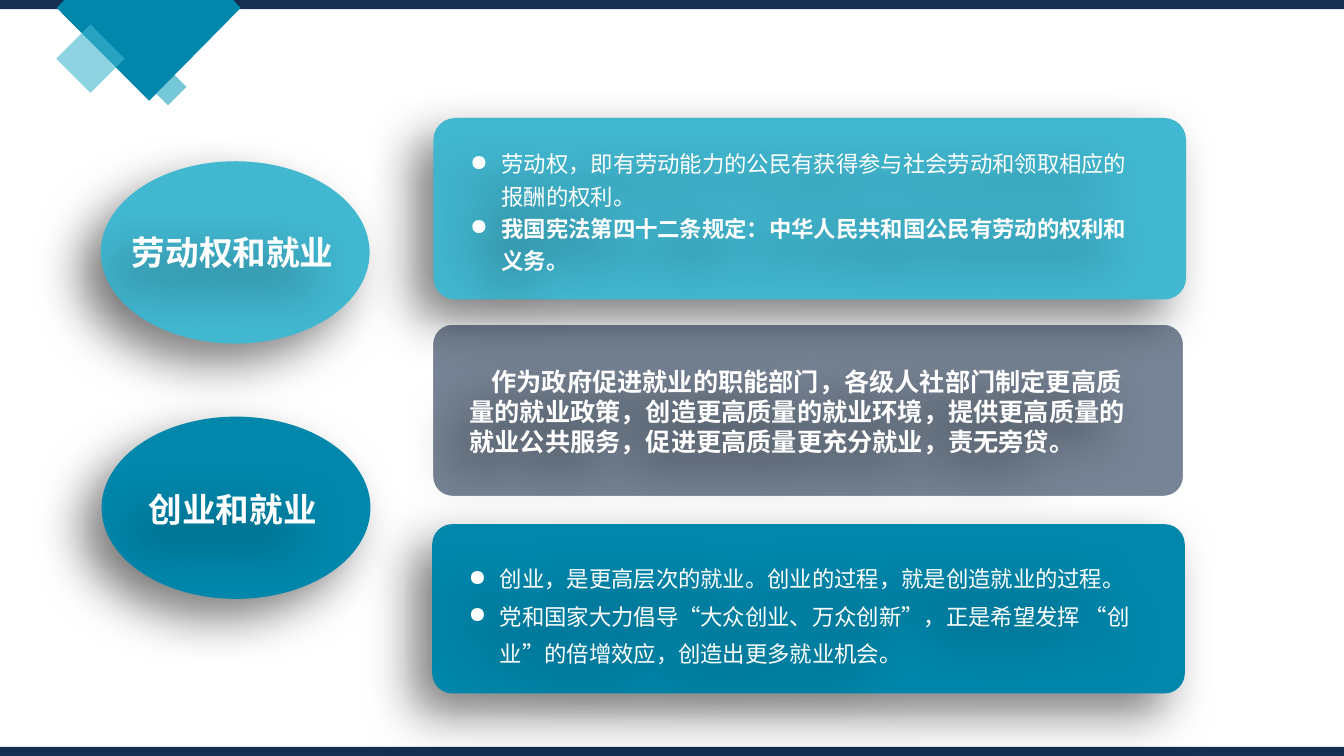
from lxml import etree
from pptx import Presentation
from pptx import util as u
from pptx.dml.color import RGBColor
from pptx.enum import shapes, text
from pptx.oxml import ns

HUES = {"navy": "152E52", "teal": "0187AC", "sky": "41B7D0", "aqua": "1AA4BE",
        "slate": "778495", "edge": "FEFFFF", "white": "FFFFFF", "black": "000000"}
COLS, ROWS = 160, 90
KIND = shapes.MSO_SHAPE


def add(node, tag, **attrs):
    return etree.SubElement(node, ns.qn(tag), attrs)


class Deck:
    def __init__(self):
        self.prs = Presentation()
        self.prs.slide_width, self.prs.slide_height = u.Inches(13.333), u.Inches(7.5)
        self.slide = self.prs.slides.add_slide(self.prs.slide_layouts[6])
        self.font = "Noto Sans CJK SC"

    def col(self, n):
        return round(self.prs.slide_width * n / COLS)

    def row(self, n):
        return round(self.prs.slide_height * n / ROWS)

    def box(self, x, y, w, h):
        return self.col(x), self.row(y), self.col(w), self.row(h)

    def tint(self, fmt, hue):
        fmt.color.rgb = RGBColor.from_string(HUES[hue])

    def paint(self, shape, hue, alpha=None):
        shape.shadow.inherit = False
        shape.fill.solid()
        shape.fill.fore_color.rgb = RGBColor.from_string(HUES[hue])
        shape.line.fill.background()
        if alpha:
            fill = shape.fill._xPr.find(ns.qn("a:solidFill"))
            add(fill[0], "a:alpha", val=str(alpha * 1000))
        return shape

    def shape(self, kind, area, hue, alpha=None):
        item = self.slide.shapes.add_shape(kind, *self.box(*area))
        return self.paint(item, hue, alpha)

    def poly(self, points, hue):
        dots = [(self.col(x), self.row(y)) for x, y in points]
        form = self.slide.shapes.build_freeform(*dots[0], scale=1.0)
        form.add_line_segments(dots[1:], close=True)
        return self.paint(form.convert_to_shape(), hue)

    def shade(self, shape):
        """Cast a soft shadow down and to the left."""
        shape.shadow.inherit = False
        glow = add(shape._element.spPr.find(ns.qn("a:effectLst")), "a:outerShdw",
                   blurRad=str(u.Pt(35)), dist=str(u.Pt(20)),
                   dir=str(135 * 60000), algn="tr", rotWithShape="0")
        add(add(glow, "a:srgbClr", val=HUES["black"]), "a:alpha", val="50000")

    def card(self, area, hue):
        item = self.shape(KIND.ROUNDED_RECTANGLE, area, hue)
        item.adjustments[0] = 0.119
        return item

    def words(self, area, lines, size, bold=(), space=None, first=0,
              dots=False, align=text.PP_ALIGN.LEFT):
        item = self.slide.shapes.add_textbox(*self.box(*area))
        self.shade(item)
        frame = item.text_frame
        frame.word_wrap = True
        frame.vertical_anchor = text.MSO_ANCHOR.MIDDLE
        frame.text = "\n".join(lines)
        for i, para in enumerate(frame.paragraphs):
            para.alignment = align
            if space:
                para.line_spacing = space
            props = para._p.get_or_add_pPr()
            if first:
                props.set("indent", str(u.Inches(first)))
            if dots:
                props.set("marL", str(u.Inches(0.31)))
                props.set("indent", str(u.Inches(-0.31)))
                add(props, "a:buChar", char="●")
            for run in para.runs:
                run.font.size, run.font.bold = u.Pt(size), i in bold
                run.font.name = self.font
                self.tint(run.font, "white")
                add(run.font._element, "a:ea", typeface=self.font)

    def oval(self, area, hue, label, span):
        self.shade(self.shape(KIND.OVAL, area, hue))
        self.words(span, [label], 24, bold=(0,), align=text.PP_ALIGN.CENTER)


def main():
    deck = Deck()
    deck.shape(KIND.DIAMOND, (17.8, 8.15, 4.4, 4.4), "aqua", 60)
    deck.shape(KIND.RECTANGLE, (0, 0, COLS, 1.1), "navy")
    deck.poly([(7.65, 0), (27.75, 0), (28.65, 0.95), (17.75, 12), (6.75, 0.95)], "teal")
    deck.shape(KIND.DIAMOND, (6.7, 2.9, 8.15, 8.15), "sky", 60)
    deck.shape(KIND.RECTANGLE, (0, ROWS - 1.1, COLS, 1.1), "navy")

    duty = deck.card((51.4, 38.5, 89.6, 20.7), "slate")
    deck.tint(duty.line, "edge")
    duty.line.width = u.Pt(2)
    deck.words((54.7, 39.7, 82.9, 18.6), [
        "作为政府促进就业的职能部门，各级人社部门制定更高质量的就业政策，"
        "创造更高质量的就业环境，提供更高质量的就业公共服务，"
        "促进更高质量更充分就业，责无旁贷。"], 18, bold=(0,), first=0.22)

    deck.shade(deck.card((51.6, 14.05, 89.6, 21.6), "sky"))
    deck.words((54.8, 16.55, 82.9, 16.8), [
        "劳动权，即有劳动能力的公民有获得参与社会劳动和领取相应的报酬的权利。",
        "我国宪法第四十二条规定：中华人民共和国公民有劳动的权利和义务。"],
        16, bold=(1,), space=1.2, dots=True)

    deck.shade(deck.card((51.45, 62.4, 89.6, 20.15), "teal"))
    deck.words((54.6, 64.9, 85.3, 15.7), [
        "创业，是更高层次的就业。创业的过程，就是创造就业的过程。",
        "党和国家大力倡导“大众创业、万众创新”，正是希望发挥 “创业”的倍增效应，"
        "创造出更多就业机会。"], 16, space=1.4, dots=True)

    deck.oval((12, 19.2, 32, 21.7), "sky", "劳动权和就业", (7.4, 24.5, 40.6, 11))
    deck.oval((12.1, 49.6, 32, 21.7), "teal", "创业和就业", (7.4, 52.6, 40.6, 16))
    deck.prs.save("out.pptx")


if __name__ == "__main__":
    main()
